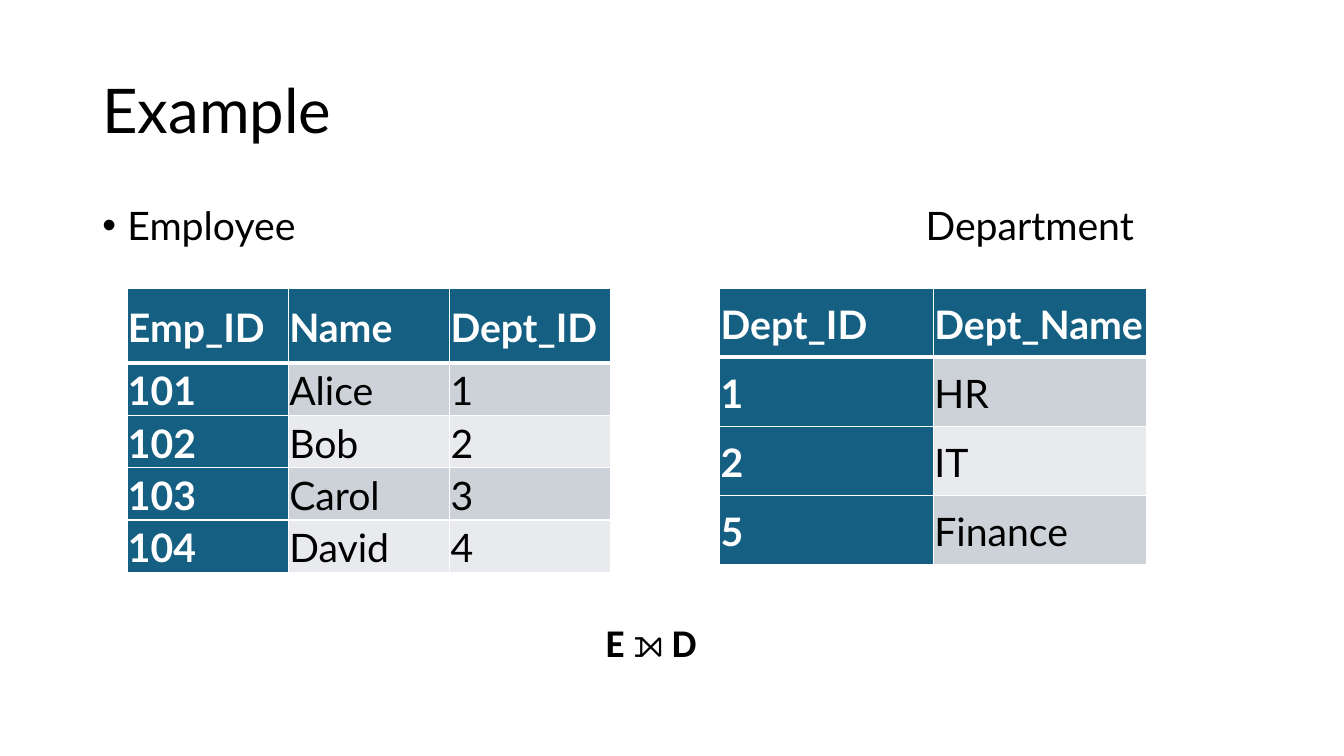
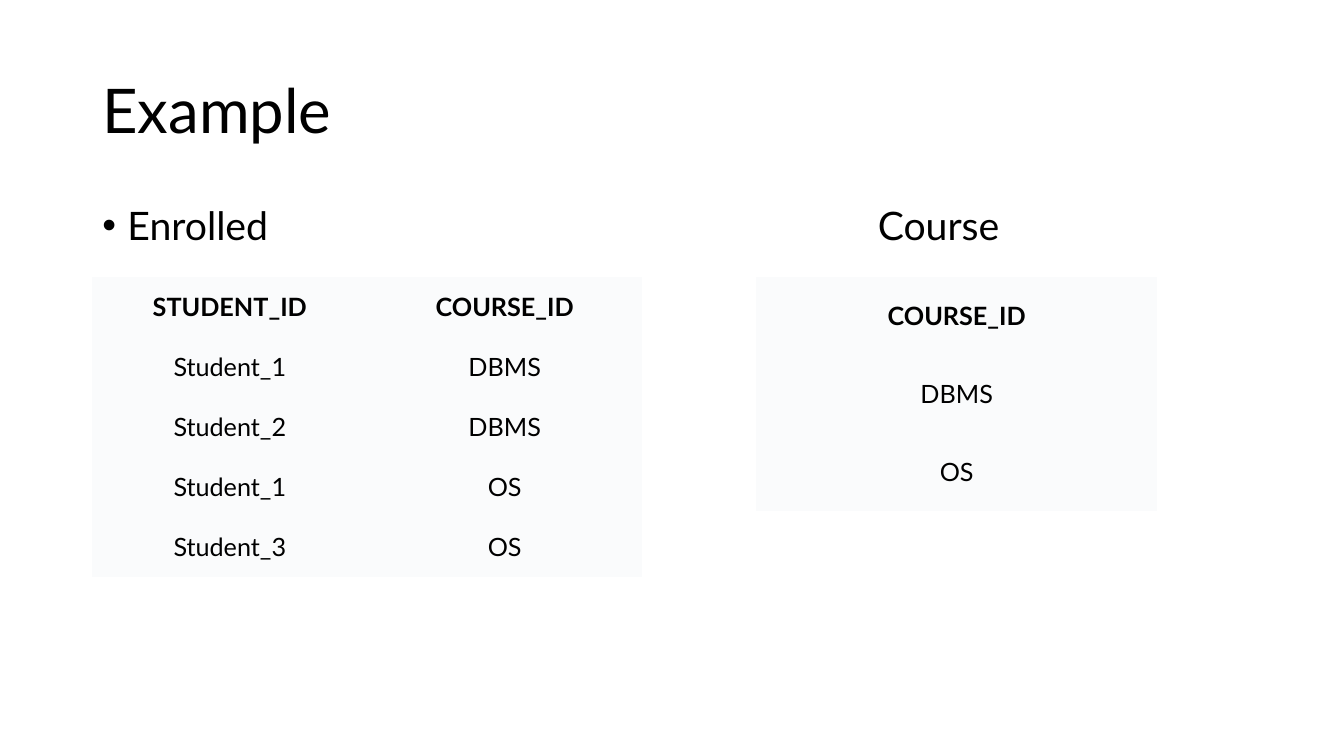
from dataclasses import dataclass

from lxml import etree
from pptx import Presentation
from pptx.dml.color import RGBColor
from pptx.enum.text import MSO_ANCHOR, PP_ALIGN
from pptx.oxml.ns import qn
from pptx.util import Inches, Pt

LEFT, CENTER = PP_ALIGN.LEFT, PP_ALIGN.CENTER
TOP, MIDDLE = MSO_ANCHOR.TOP, MSO_ANCHOR.MIDDLE

# The slide is a grid of square units, six to the inch
COLUMNS, ROWS = 80, 45
UNIT = Inches(1) // 6
BLANK_LAYOUT = 6
PLAIN_TABLE_STYLE = "{2D5ABB26-0587-4C30-8999-92F81FD0307C}"


@dataclass(frozen=True)
class Theme:
    font: str = "Lato"
    formula_font: str = "Calibri"
    symbol_font: str = "Times New Roman"
    bullet_font: str = "Arial"
    text: str = "000000"
    inverse: str = "FFFFFF"
    accent: str = "156082"
    bands: tuple = ("CCD2D8", "E8EAED")
    pale: str = "FAFBFC"
    title_size: int = 44
    body_size: int = 28
    small_size: int = 18
    rule: int = 1
    heavy_rule: int = 3


THEME = Theme()


@dataclass(frozen=True)
class Box:
    """A rectangle in grid units."""
    left: float
    top: float
    width: float
    height: float

    def from_column(self, offset):
        return Box(self.left + offset, self.top, self.width - offset, self.height)

    def emu(self):
        return [round(n * UNIT) for n in (self.left, self.top, self.width, self.height)]


TITLE_BOX = Box(5.5, 2.4, 69, 8.7)
HEADINGS_BOX = Box(5.5, 12, 69, 4)


# Text
def write_text(frame, text, size=THEME.body_size, font=THEME.font, color=THEME.text,
               bold=False, align=LEFT, anchor=TOP, line_spacing=None, before=0,
               after=0, bullet=False):
    """Write one paragraph; text is a string or a list of (text, font) pairs."""
    frame.word_wrap = True
    frame.vertical_anchor = anchor
    paragraph = frame.paragraphs[0]
    paragraph.alignment = align
    paragraph.line_spacing = line_spacing
    paragraph.space_before, paragraph.space_after = Pt(before), Pt(after)
    if bullet:
        properties = paragraph._p.get_or_add_pPr()
        properties.set("marL", str(Inches(0.25)))
        properties.set("indent", str(-Inches(0.25)))
        etree.SubElement(properties, qn("a:buFont"), typeface=THEME.bullet_font)
        etree.SubElement(properties, qn("a:buChar"), char="•")
    for words, typeface in [(text, font)] if isinstance(text, str) else text:
        run = paragraph.add_run()
        run.text = words
        run.font.name, run.font.size, run.font.bold = typeface, Pt(size), bold
        run.font.color.rgb = RGBColor.from_string(color)


def add_text(slide, box, text, **text_format):
    write_text(slide.shapes.add_textbox(*box.emu()).text_frame, text, **text_format)


# Tables
def set_borders(cell, widths):
    """Draw the left, right, top and bottom rules of a cell."""
    properties = cell._tc.get_or_add_tcPr()
    for position, (side, width) in enumerate(zip("LRTB", widths)):
        line = etree.Element(qn(f"a:ln{side}"), w=str(Pt(width)))
        fill = etree.SubElement(line, qn("a:solidFill"))
        etree.SubElement(fill, qn("a:srgbClr"), val=THEME.inverse)
        properties.insert(position, line)


def style_key_cell(cell, text, row, column):
    """Dark header row and key column, banded body, white rules."""
    is_key = row == 0 or column == 0
    cell.margin_left = cell.margin_right = Inches(0.01)
    cell.margin_top = cell.margin_bottom = Inches(0.01)
    fill = THEME.accent if is_key else THEME.bands[(row - 1) % 2]
    cell.fill.solid()
    cell.fill.fore_color.rgb = RGBColor.from_string(fill)
    write_text(cell.text_frame, text, bold=is_key, line_spacing=1.07, after=8,
               color=THEME.inverse if is_key else THEME.text)
    set_borders(cell, (THEME.rule, THEME.rule,
                       THEME.heavy_rule if row == 1 else THEME.rule,
                       THEME.heavy_rule if row == 0 else THEME.rule))


def style_pale_cell(cell, text, row, column):
    """Centred text on one pale fill, bold in the header row."""
    cell.fill.solid()
    cell.fill.fore_color.rgb = RGBColor.from_string(THEME.pale)
    write_text(cell.text_frame, text, size=THEME.small_size, bold=row == 0, align=CENTER)


def add_data_table(slide, box, records, style_cell, header_share=None):
    """Fill the box with equal columns and rows; the header may differ in height."""
    row_count, column_count = len(records), len(records[0])
    table = slide.shapes.add_table(row_count, column_count, *box.emu()).table
    table._tbl.tblPr.find(qn("a:tableStyleId")).text = PLAIN_TABLE_STYLE
    table.first_row = table.horz_banding = False
    header_share = header_share or 1 / row_count
    body_share = (1 - header_share) / (row_count - 1)
    for column in table.columns:
        column.width = round(box.width * UNIT / column_count)
    for row, record in enumerate(records):
        share = body_share if row else header_share
        table.rows[row].height = round(box.height * UNIT * share)
        for column, text in enumerate(record):
            cell = table.cell(row, column)
            style_cell(cell, text, row, column)
            cell.vertical_anchor = MIDDLE


# Slides
def add_example_slide(presentation, left_heading, right_heading, right_offset):
    """Add a slide with the shared title and the headings of its two tables."""
    slide = presentation.slides.add_slide(presentation.slide_layouts[BLANK_LAYOUT])
    add_text(slide, TITLE_BOX, "Example", size=THEME.title_size, anchor=MIDDLE,
             line_spacing=0.9)
    heading = dict(line_spacing=0.9, before=10)
    add_text(slide, HEADINGS_BOX, left_heading, bullet=True, **heading)
    add_text(slide, HEADINGS_BOX.from_column(right_offset), right_heading, **heading)
    return slide


def add_join_slide(presentation):
    slide = add_example_slide(presentation, "Employee", "Department", 49)
    employees = [("Emp_ID", "Name", "Dept_ID"), ("101", "Alice", "1"),
                 ("102", "Bob", "2"), ("103", "Carol", "3"), ("104", "David", "4")]
    departments = [("Dept_ID", "Dept_Name"), ("1", "HR"), ("2", "IT"), ("5", "Finance")]
    add_data_table(slide, Box(7.56, 17.16, 28.8, 16.44), employees, style_key_cell, 0.27)
    add_data_table(slide, Box(42.84, 17.16, 25.44, 16.44), departments, style_key_cell)
    # Left outer join expression
    expression = [("E ", THEME.formula_font), ("⟕", THEME.symbol_font),
                  (" D", THEME.formula_font)]
    add_text(slide, Box(35.46, 36.3, 9.12, 3.48), expression, bold=True,
             line_spacing=1.07, after=8)


def add_division_slide(presentation):
    slide = add_example_slide(presentation, "Enrolled", "Course", 46.16)
    enrolments = [("STUDENT_ID", "COURSE_ID"), ("Student_1", "DBMS"),
                  ("Student_2", "DBMS"), ("Student_1", "OS"), ("Student_3", "OS")]
    courses = [("COURSE_ID",), ("DBMS",), ("OS",)]
    add_data_table(slide, Box(5.5, 16.5, 32.73, 17.86), enrolments, style_pale_cell)
    add_data_table(slide, Box(45, 16.5, 23.9, 13.92), courses, style_pale_cell)


def main():
    presentation = Presentation()
    presentation.slide_width, presentation.slide_height = COLUMNS * UNIT, ROWS * UNIT
    add_join_slide(presentation)
    add_division_slide(presentation)
    presentation.save("out.pptx")


if __name__ == "__main__":
    main()
